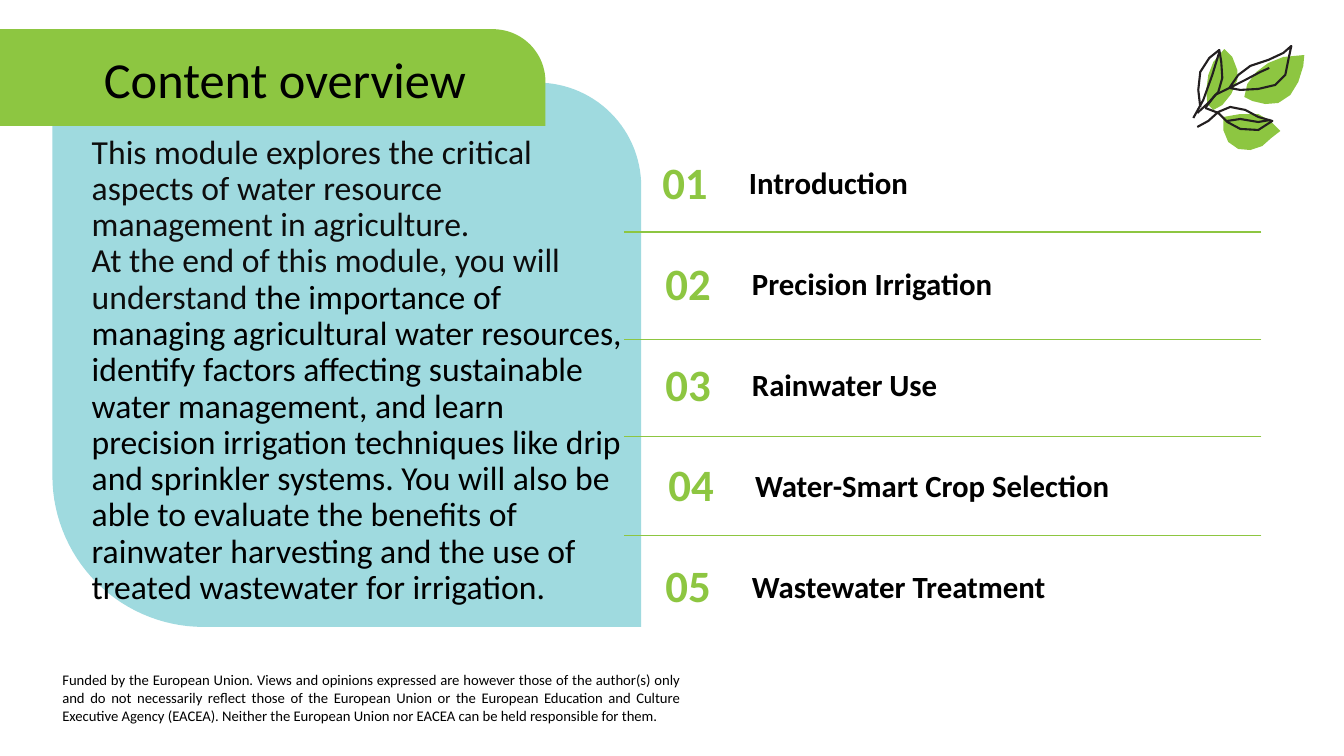
import math
from pptx import Presentation
from pptx.dml.color import RGBColor
from pptx.enum.shapes import MSO_CONNECTOR
from pptx.enum.text import MSO_ANCHOR, MSO_AUTO_SIZE, PP_ALIGN
from pptx.oxml.ns import qn
from pptx.util import Inches, Pt
from lxml import etree

LEFT, CENTER, JUSTIFY = PP_ALIGN.LEFT, PP_ALIGN.CENTER, PP_ALIGN.JUSTIFY
TOP, MIDDLE = MSO_ANCHOR.TOP, MSO_ANCHOR.MIDDLE
NO_FIT, STRAIGHT = MSO_AUTO_SIZE.NONE, MSO_CONNECTOR.STRAIGHT
GREEN, AQUA, BLACK, INK = "8DC641", "9FDADF", "000000", "231F20"


def rgb(value):
    return RGBColor.from_string(value)


def write(sp, *paragraphs, box, size, color=BLACK, bold=False, align=LEFT,
          anchor=MIDDLE, spacing=0.9, indent=0):
    """Each paragraph is a list of (text, color or None) runs."""
    sp.left, sp.top, sp.width, sp.height = [Inches(v) for v in box]
    tf = sp.text_frame
    tf.word_wrap, tf.auto_size, tf.vertical_anchor = True, NO_FIT, anchor
    for i, runs in enumerate(paragraphs):
        p = tf.add_paragraph() if i else tf.paragraphs[0]
        pPr = p._p.get_or_add_pPr()
        pPr.set("marL", str(Inches(indent)))
        pPr.set("indent", "0")
        etree.SubElement(pPr, qn("a:buNone"))
        p.alignment, p.line_spacing = align, spacing
        p.space_before = p.space_after = Pt(0)
        for text, run_color in runs:
            r = p.add_run()
            r.text = text
            r.font.name, r.font.size, r.font.bold = "Calibri", Pt(size), bold
            r.font.color.rgb = rgb(run_color or color)


prs = Presentation()
prs.slide_width, prs.slide_height = Inches(13.33), Inches(7.5)
s = prs.slides.add_slide(prs.slide_layouts[1])
title, body = s.placeholders[0], s.placeholders[1]

# Panel and banner: left, top, right, bottom, radii clockwise from top left
outlines = []
for color, x0, y0, x1, y1, radii in [
    (AQUA, 0.52, 0.82, 6.36, 6.22, (0, 1.03, 0, 1.5)),
    (GREEN, 0, 0.29, 5.41, 1.25, (0, 0.52, 0, 0)),
]:
    points = []
    corners = [(x0, y0, 1, 1), (x1, y0, -1, 1), (x1, y1, -1, -1), (x0, y1, 1, -1)]
    for i, ((x, y, dx, dy), radius) in enumerate(zip(corners, radii)):
        for step in range(0, 91, 3) if radius else [0]:
            a = math.radians(180 + 90 * i + step)
            points.append((x + radius * (dx + math.cos(a)) if radius else x,
                           y + radius * (dy + math.sin(a)) if radius else y))
    outlines.append((points, Inches(1), color, None))

# Leaves: green blades under ink strokes, in units of 1/100.8 inch
blades = [
    [(1224, 49), (1232, 57), (1237, 70), (1237, 80), (1231, 94), (1222, 105),
     (1213, 110), (1207, 104), (1206, 90), (1208, 75), (1213, 62)],
    [(1304, 55), (1303, 66), (1298, 82), (1290, 95), (1278, 103), (1265, 104),
     (1252, 101), (1244, 97), (1247, 84), (1256, 72), (1268, 63), (1283, 57)],
    [(1223, 117), (1240, 114), (1258, 114), (1270, 121), (1280, 131), (1271, 138),
     (1262, 146), (1250, 150), (1238, 149), (1228, 142), (1223, 130)],
]
strokes = [
    [(1200, 107), (1198, 90), (1200, 72), (1209, 58), (1219, 50), (1221, 62),
     (1222, 78), (1218, 92), (1208, 103), (1197, 113)],
    [(1219, 52), (1212, 75), (1203, 100), (1193, 118)],
    [(1205, 108), (1215, 95), (1229, 88), (1238, 75), (1250, 66), (1268, 60),
     (1283, 53), (1291, 46), (1288, 60), (1285, 75), (1275, 85), (1258, 89),
     (1240, 90), (1229, 88), (1245, 80), (1260, 72), (1269, 68)],
    [(1197, 127), (1208, 121), (1218, 112), (1230, 107), (1245, 110), (1258, 117),
     (1272, 121), (1258, 130), (1240, 129), (1227, 122), (1218, 113), (1205, 108)],
    [(1227, 121), (1240, 119), (1258, 122), (1270, 120)],
]
unit = Inches(1) / 100.8
outlines += [(points, unit, GREEN, None) for points in blades]
outlines += [(points, unit, None, INK) for points in strokes]

for points, scale, fill, line in outlines:
    ff = s.shapes.build_freeform(round(points[0][0] * scale),
                                 round(points[0][1] * scale), scale=1.0)
    ff.add_line_segments([(round(x * scale), round(y * scale)) for x, y in points[1:]],
                         close=bool(fill))
    sp = ff.convert_to_shape()
    sp.shadow.inherit = False
    if fill:
        sp.fill.solid()
        sp.fill.fore_color.rgb = rgb(fill)
        sp.line.fill.background()
    else:
        sp.fill.background()
        sp.line.color.rgb = rgb(line)
        sp.line.width = Pt(1.5)

# Dividers
for y in (2.3, 3.37, 4.33, 5.31):
    cn = s.shapes.add_connector(STRAIGHT, Inches(12.51), Inches(y), Inches(6.19), Inches(y))
    cn.line.color.rgb = rgb(GREEN)
    cn.line.width = Pt(1)
    etree.SubElement(cn._element.spPr, qn("a:effectLst"))

# Title and introduction, brought in front of the panel
for sp in (body, title):
    s.shapes.element.append(sp.element)
write(title, [("Content overview", None)], box=(0.93, 0.42, 5.51, 0.79), size=36)
write(body,
      [("This module explores the critical aspects of water resource management "
        "in agriculture.", None)],
      [("At the end of this module, you will understand ", None),
       ("the importance of managing agricultural water resources, identify factors "
        "affecting sustainable water management, and learn precision irrigation "
        "techniques like drip and sprinkler systems. You will also be able to evaluate "
        "the benefits of rainwater harvesting and the use of treated wastewater for "
        "irrigation.", BLACK)],
      box=(0.56, 1.29, 5.76, 4.36), size=24, color="0D0D0D", anchor=TOP, indent=0.25)

# Numbered topics
topics = [("Introduction", 6.41), ("Precision Irrigation", 6.44), ("Rainwater Use", 6.44),
          ("Water-Smart Crop Selection", 6.47), ("Wastewater Treatment", 6.44)]
for i, (topic, x) in enumerate(topics):
    y = 1.46 + i
    number_box, topic_box = [s.shapes.add_textbox(0, 0, 0, 0) for _ in range(2)]
    write(number_box, [(f"{i + 1:02}", None)], box=(x, y, 0.77, 0.75),
          size=32, color=GREEN, bold=True, align=CENTER)
    write(topic_box, [(topic, None)], box=(x + 0.92, y, 4.88, 0.75), size=22, bold=True)

# Funding notice
write(s.shapes.add_textbox(0, 0, 0, 0),
      [("Funded by the European Union. Views and opinions expressed are however those of "
        "the author(s) only and do not necessarily reflect those of the European Union or "
        "the European Education and Culture Executive Agency (EACEA). Neither the European "
        "Union nor EACEA can be held responsible for them.", None)],
      box=(0.52, 6.61, 6.33, 0.66), size=10.5, align=JUSTIFY, anchor=TOP, spacing=1.0)

prs.save("out.pptx")
